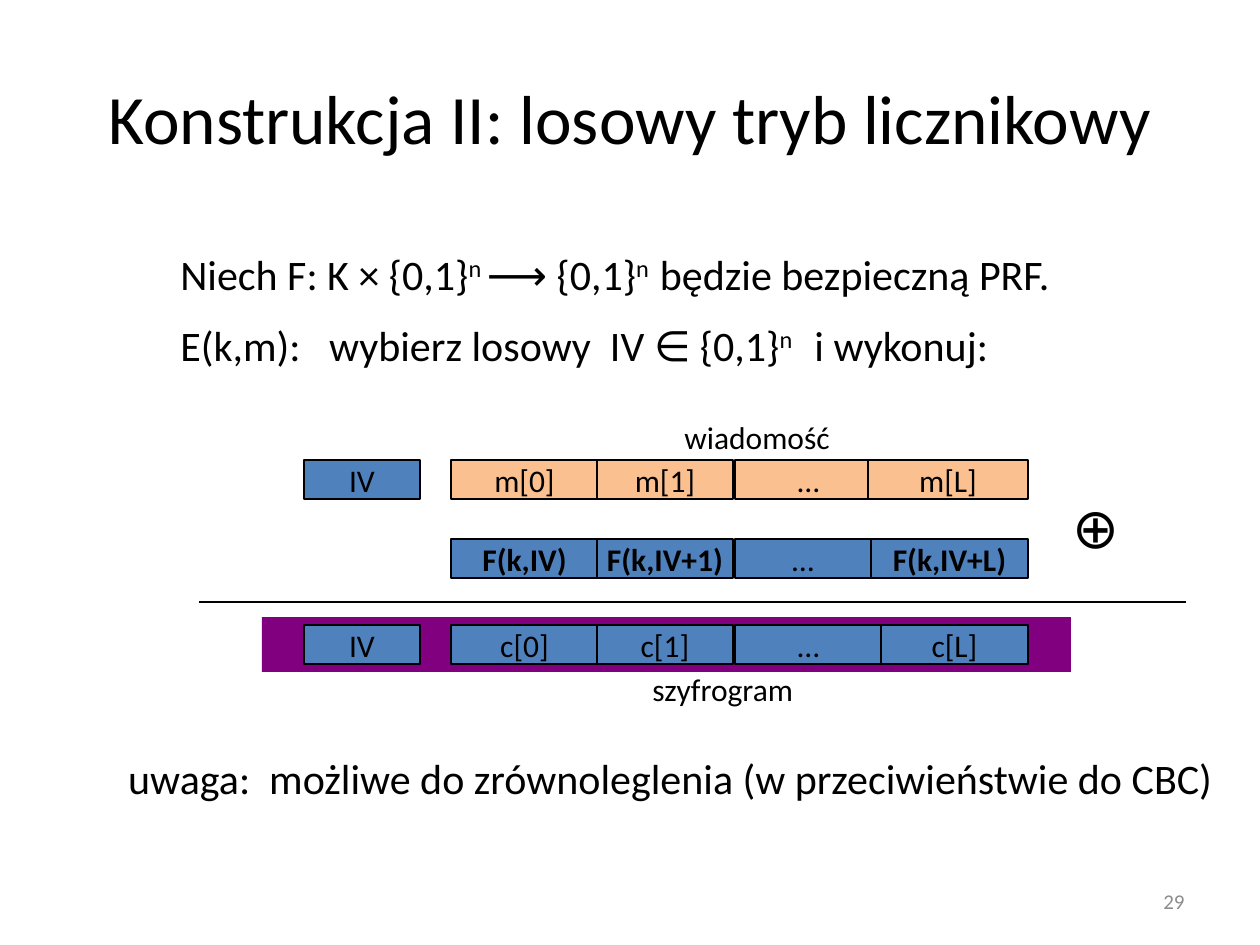
"""Build the slide on randomized counter mode encryption."""
from lxml.etree import SubElement
from pptx import Presentation
from pptx.dml.color import RGBColor
from pptx.enum.shapes import MSO_CONNECTOR, MSO_SHAPE
from pptx.enum.text import MSO_ANCHOR, MSO_AUTO_SIZE, PP_ALIGN
from pptx.oxml.ns import qn
from pptx.util import Emu, Pt

BLACK = RGBColor(0x00, 0x00, 0x00)
GRAY = RGBColor(0x8C, 0x8C, 0x8C)
BLUE = RGBColor(0x4F, 0x81, 0xBD)
ORANGE = RGBColor(0xFA, 0xC0, 0x90)
PURPLE = RGBColor(0x80, 0x00, 0x80)
EMU_PER_PX = 914400 / 126


def px(*lengths):
    return [Emu(round(length * EMU_PER_PX)) for length in lengths]


def write(frame, paragraphs, size, align, color=BLACK, bold=False, **frame_format):
    for name, value in frame_format.items():
        setattr(frame, name, value)
    for index, pieces in enumerate(paragraphs):
        paragraph = frame.add_paragraph() if index else frame.paragraphs[0]
        paragraph.alignment = align
        if index:
            paragraph.space_before = Pt(12)
        for position, piece in enumerate(pieces):
            run = paragraph.add_run()
            run.text = piece
            run.font.color.rgb = color
            for name, value in {"name": "Calibri", "size": Pt(size), "bold": bold}.items():
                setattr(run.font, name, value)
            if position % 2:
                run.font._element.set("baseline", "30000")


presentation = Presentation()
presentation.slide_width, presentation.slide_height = px(1260, 945)
slide = presentation.slides.add_slide(presentation.slide_layouts[6])
shapes = slide.shapes

MIDDLE = {"vertical_anchor": MSO_ANCHOR.MIDDLE, "word_wrap": True}
GROWING = {"word_wrap": False, "auto_size": MSO_AUTO_SIZE.SHAPE_TO_FIT_TEXT}
definition = [
    ["Niech F: K × {0,1}", "n ", "⟶ {0,1}", "n  ", "będzie bezpieczną PRF."],
    ["E(k,m):   wybierz losowy  IV ∈ {0,1}", "n    ", "i wykonuj:"],
]
remark = "uwaga:  możliwe do zrównoleglenia (w przeciwieństwie do CBC)"
captions = [
    ((63, 38, 1134, 157), [["Konstrukcja II: losowy tryb licznikowy"]], 39.6, PP_ALIGN.CENTER, BLACK, MIDDLE),
    ((903, 876, 294, 50), [["29"]], 12, PP_ALIGN.RIGHT, GRAY, MIDDLE),
    ((1060, 486, 69, 81), [["⊕"]], 32, PP_ALIGN.LEFT, BLACK, GROWING),
    ((111, 746, 1119, 63), [[remark]], 24, PP_ALIGN.CENTER, BLACK, GROWING),
    ((672, 412, 173, 50), [["wiadomość"]], 18, PP_ALIGN.LEFT, BLACK, GROWING),
    ((640, 664, 168, 50), [["szyfrogram"]], 18, PP_ALIGN.LEFT, BLACK, GROWING),
    ((168, 242, 907, 136), definition, 24, PP_ALIGN.LEFT, BLACK, GROWING),
]
for bounds, paragraphs, size, align, color, frame_format in captions:
    caption = shapes.add_textbox(*px(*bounds))
    write(caption.text_frame, paragraphs, size, align, color, **frame_format)

ciphertext_band = shapes.add_shape(MSO_SHAPE.RECTANGLE, *px(262, 617, 809, 55))
ciphertext_band.shadow.inherit = False
ciphertext_band.fill.solid()
ciphertext_band.fill.fore_color.rgb = PURPLE
ciphertext_band.line.fill.background()

BLOCKS_RIGHT = 1028
block_rows = [
    (460, ORANGE, False, [("m[0]", 451, 147), ("m[1]", 597, 136), ("…", 735, 147), ("m[L]", 868, BLOCKS_RIGHT - 868)]),
    (539, BLUE, True, [("F(k,IV)", 451, 147), ("F(k,IV+1)", 597, 136), ("…", 735, 136), ("F(k,IV+L)", 871, BLOCKS_RIGHT - 871)]),
    (625, BLUE, False, [("c[0]", 451, 147), ("c[1]", 597, 136), ("…", 735, 147), ("c[L]", 881, BLOCKS_RIGHT - 881)]),
    (460, BLUE, False, [("IV", 304, 116)]),
    (625, BLUE, False, [("IV", 304, 116)]),
]
for top, fill, bold, blocks in block_rows:
    for label, left, width in blocks:
        block = shapes.add_shape(MSO_SHAPE.RECTANGLE, *px(left, top, width, 39))
        block.shadow.inherit = False
        block.fill.solid()
        block.fill.fore_color.rgb = fill
        block.line.color.rgb = BLACK
        block.line.width = Pt(0.75)
        write(block.text_frame, [[label]], 18, PP_ALIGN.CENTER, bold=bold and label != "…",
              vertical_anchor=MSO_ANCHOR.MIDDLE, word_wrap=False)

sum_line = shapes.add_connector(MSO_CONNECTOR.STRAIGHT, *px(199, 602, 1186, 602))
sum_line.line.color.rgb = BLACK
sum_line.line.width = Pt(0.75)
SubElement(sum_line._element.spPr, qn("a:effectLst"))

presentation.save("out.pptx")
